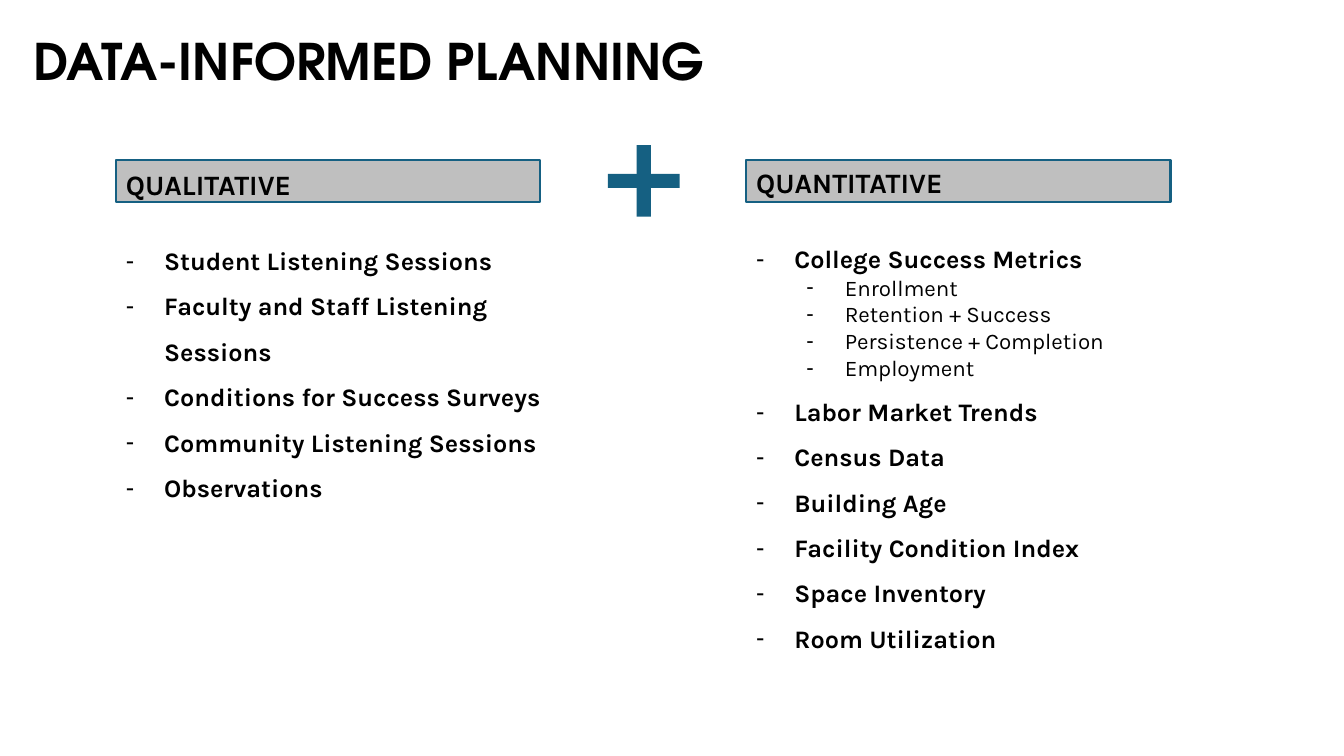
from lxml.etree import SubElement
from pptx import Presentation
from pptx.dml.color import RGBColor
from pptx.enum.shapes import MSO_SHAPE
from pptx.enum.text import MSO_ANCHOR, PP_ALIGN
from pptx.oxml.ns import qn
from pptx.util import Inches, Pt

BLACK, GREY, BLUE = "000000", "BFBFBF", "156082"

QUALITATIVE = [
    ("Student Listening Sessions", 0),
    ("Faculty and Staff Listening Sessions", 0),
    ("Conditions for Success Surveys", 0),
    ("Community Listening Sessions", 0),
    ("Observations", 0),
]
QUANTITATIVE = [
    ("College Success Metrics", 0),
    ("Enrollment", 1),
    ("Retention + Success", 1),
    ("Persistence + Completion", 1),
    ("Employment", 1),
    ("Labor Market Trends", 0),
    ("Census Data", 0),
    ("Building Age", 0),
    ("Facility Condition Index", 0),
    ("Space Inventory", 0),
    ("Room Utilization", 0),
]


def color(value):
    return RGBColor.from_string(value)


def format_text(para, size, bold=True, font="Karla"):
    for span in para.runs:
        span.font.name = font
        span.font.size = Pt(size)
        span.font.bold = bold
        span.font.color.rgb = color(BLACK)


def add_bar(shapes, left, top, width, height, fill, line=None):
    bar = shapes.add_shape(MSO_SHAPE.RECTANGLE, Inches(left), Inches(top),
                           Inches(width), Inches(height))
    bar.shadow.inherit = False
    bar.fill.solid()
    bar.fill.fore_color.rgb = color(fill)
    if line:
        bar.line.color.rgb = color(line)
        bar.line.width = Pt(1.5)
    else:
        bar.line.fill.background()


def add_title(page, text, left, top, width, height):
    title = page.shapes.title
    title.left, title.top = Inches(left), Inches(top)
    title.width, title.height = Inches(width), Inches(height)
    frame = title.text_frame
    frame.text = text
    frame.word_wrap = True
    frame.vertical_anchor = MSO_ANCHOR.MIDDLE
    para = frame.paragraphs[0]
    para.alignment = PP_ALIGN.LEFT
    para.line_spacing = 0.9
    format_text(para, 36, font="TeX Gyre Adventor")


def add_dash(para, level):
    properties = para._p.get_or_add_pPr()
    properties.set("marL", str(Inches(0.38 + 0.5 * level)))
    properties.set("indent", str(Inches(-0.38)))
    SubElement(properties, qn("a:buFont")).set("typeface", "Arial")
    SubElement(properties, qn("a:buChar")).set("char", "-")


def add_column(page, heading, items, left, top, width, height):
    box = page.shapes.add_textbox(Inches(left), Inches(top), Inches(width), Inches(height))
    frame = box.text_frame
    frame.word_wrap = True
    frame.text = heading
    frame.paragraphs[0].space_after = Pt(21)
    format_text(frame.paragraphs[0], 20)
    for text, level in items:
        para = frame.add_paragraph()
        para.text = text
        para.level = level
        add_dash(para, level)
        para.line_spacing = 1.0 if level else 1.5
        format_text(para, 16 if level else 18, bold=not level)


def add_plus(page, left, top, size, thickness):
    plus = page.shapes.add_group_shape()
    offset = (size - thickness) / 2
    add_bar(plus.shapes, left + offset, top, thickness, size, BLUE)
    add_bar(plus.shapes, left, top + offset, size, thickness, BLUE)


def main():
    deck = Presentation()
    deck.slide_width, deck.slide_height = Inches(13.33), Inches(7.5)
    page = deck.slides.add_slide(deck.slide_layouts[5])
    add_title(page, "DATA-INFORMED PLANNING", 0.23, 0, 8.59, 1.28)
    for left in (1.15, 7.4):
        add_bar(page.shapes, left, 1.59, 4.21, 0.41, GREY, BLUE)
    add_column(page, "QUALITATIVE", QUALITATIVE, 1.15, 1.61, 4.49, 3.42)
    add_column(page, "QUANTITATIVE", QUANTITATIVE, 7.4, 1.59, 4.21, 5.11)
    add_plus(page, 6.03, 1.44, 0.71, 0.14)
    deck.save("out.pptx")


if __name__ == "__main__":
    main()
